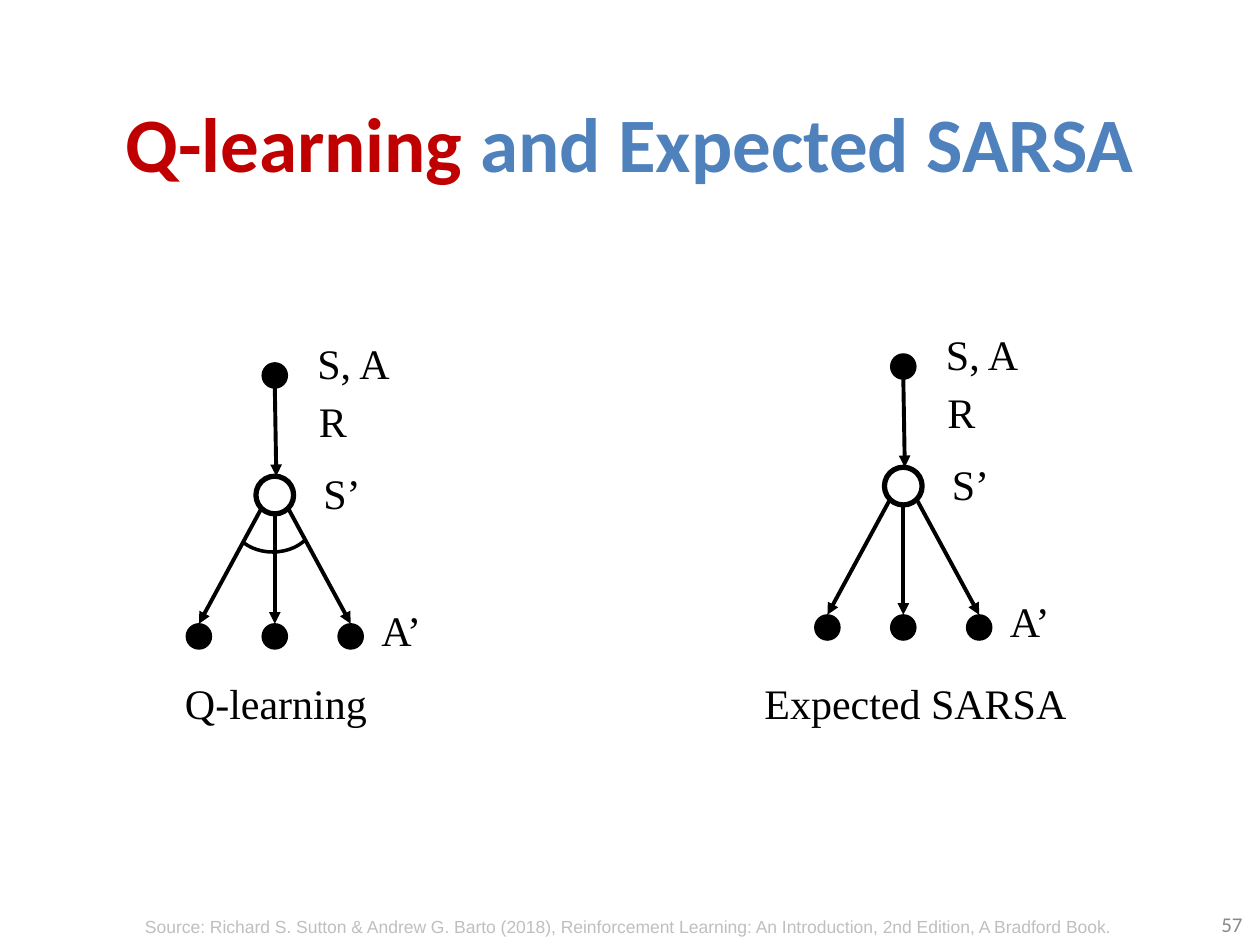
from lxml.etree import SubElement
from pptx import Presentation
from pptx.dml.color import RGBColor
from pptx.enum.shapes import MSO_CONNECTOR, MSO_SHAPE
from pptx.enum.text import MSO_ANCHOR, MSO_AUTO_SIZE, PP_ALIGN
from pptx.oxml.ns import qn
from pptx.util import Cm, Pt

COLORS = {
    "black": "000000",
    "white": "FFFFFF",
    "red": "C00000",
    "blue": "4F81BD",
    "number": "898989",
    "source": "BFBFBF",
}
FORMATS = {
    "title": {"name": "Calibri", "size": Pt(44), "bold": True},
    "number": {"name": "Calibri", "size": Pt(12)},
    "source": {"name": "Arial", "size": Pt(10)},
    "label": {"name": "Times New Roman", "size": Pt(24)},
}
DOT_SIZE, STATE_SIZE = 0.51, 0.76
STATE_DROP, ACTION_DROP, ACTION_GAP = 2.41, 5.26, 1.53
LABEL_HEIGHT = 1.27
# Text, offset from the root dot and width, in centimetres
LABELS = [
    ("S, A", 0.61, -0.89, 1.98),
    ("R", 0.64, 0.28, 1.09),
    ("S’", 0.73, 1.73, 1.27),
    ("A’", 1.9, 4.5, 1.32),
]


def color(name):
    return RGBColor.from_string(COLORS[name])


class SlideBuilder:
    """Holds the current slide and its style; all lengths are centimetres."""

    def __init__(self, slide):
        self.slide = slide

    def text(self, runs, left, top, width, height, style,
             align=PP_ALIGN.LEFT, anchor=MSO_ANCHOR.TOP, wrap=True, grow=False):
        """Add one paragraph made of (text, color name) runs."""
        shape = self.slide.shapes.add_textbox(Cm(left), Cm(top), Cm(width), Cm(height))
        frame = shape.text_frame
        frame.word_wrap = wrap
        frame.vertical_anchor = anchor
        frame.auto_size = MSO_AUTO_SIZE.SHAPE_TO_FIT_TEXT if grow else MSO_AUTO_SIZE.NONE
        paragraph = frame.paragraphs[0]
        paragraph.alignment = align
        for content, color_name in runs:
            run = paragraph.add_run()
            run.text = content
            for attribute, value in FORMATS[style].items():
                setattr(run.font, attribute, value)
            run.font.color.rgb = color(color_name)

    def label(self, content, left, top, width):
        self.text([(content, "black")], left, top, width, LABEL_HEIGHT, "label",
                  wrap=False, grow=True)

    def circle(self, x, y, size, fill, line_width):
        """Add a circle centred on x, y."""
        shape = self.slide.shapes.add_shape(
            MSO_SHAPE.OVAL, Cm(x - size / 2), Cm(y - size / 2), Cm(size), Cm(size))
        shape.shadow.inherit = False
        shape.fill.solid()
        shape.fill.fore_color.rgb = color(fill)
        shape.line.color.rgb = color("black")
        shape.line.width = Pt(line_width)

    def arrow(self, x1, y1, x2, y2):
        connector = self.slide.shapes.add_connector(
            MSO_CONNECTOR.STRAIGHT, Cm(x1), Cm(y1), Cm(x2), Cm(y2))
        connector.line.color.rgb = color("black")
        connector.line.width = Pt(2.25)
        SubElement(connector.line._get_or_add_ln(), qn("a:tailEnd"), type="triangle")
        SubElement(connector._element.spPr, qn("a:effectLst"))

    def arc(self, left, top, width, height):
        shape = self.slide.shapes.add_shape(
            MSO_SHAPE.ARC, Cm(left), Cm(top), Cm(width), Cm(height))
        shape.shadow.inherit = False
        shape.adjustments[0] = 21.36
        shape.adjustments[1] = 83.5
        shape.fill.background()
        shape.line.color.rgb = color("black")
        shape.line.width = Pt(2)

    def backup_diagram(self, x, y, maximum=False):
        """Draw the tree below a root dot at x, y; an arc marks a maximum."""
        action_y = y + ACTION_DROP
        action_top = action_y - DOT_SIZE / 2
        self.circle(x, y, DOT_SIZE, "black", 0.75)
        self.arrow(x, y + DOT_SIZE / 2, x + 0.03, y + STATE_DROP - STATE_SIZE / 2)
        self.circle(x, y + STATE_DROP, STATE_SIZE, "white", 3)
        for side in (-1, 0, 1):
            start_drop = 0.27 if side else STATE_SIZE / 2
            action_x = x + side * ACTION_GAP
            self.circle(action_x, action_y, DOT_SIZE, "black", 0.75)
            self.arrow(x + side * 0.27, y + STATE_DROP + start_drop, action_x, action_top)
        if maximum:
            self.arc(x - 0.89, y + 2.21, 1.7, 1.35)
        for content, dx, dy, width in LABELS:
            self.label(content, x + dx, y + dy, width)


def main():
    presentation = Presentation()
    presentation.slide_width, presentation.slide_height = Cm(25.4), Cm(19.05)
    slide = presentation.slides.add_slide(presentation.slide_layouts[6])
    builder = SlideBuilder(slide)

    builder.text([("Q-learning", "red"), (" and Expected SARSA", "blue")],
                 1.27, 0.76, 22.86, 4.19, "title", PP_ALIGN.CENTER, MSO_ANCHOR.MIDDLE)
    builder.text([("57", "number")], 19.38, 18.11, 5.92, 1.02, "number",
                 PP_ALIGN.RIGHT, MSO_ANCHOR.MIDDLE)
    source = ("Source: Richard S. Sutton & Andrew G. Barto (2018), Reinforcement "
              "Learning: An Introduction, 2nd Edition, A Bradford Book.")
    builder.text([(source, "source")], 1.22, 18.34, 22.86, 0.69, "source",
                 PP_ALIGN.CENTER, grow=True)

    builder.backup_diagram(5.54, 7.57, maximum=True)
    builder.label("Q-learning", 3.48, 13.54, 4.17)
    builder.backup_diagram(18.21, 7.39)
    builder.label("Expected SARSA", 15.16, 13.54, 6.65)

    presentation.save("out.pptx")


if __name__ == "__main__":
    main()
